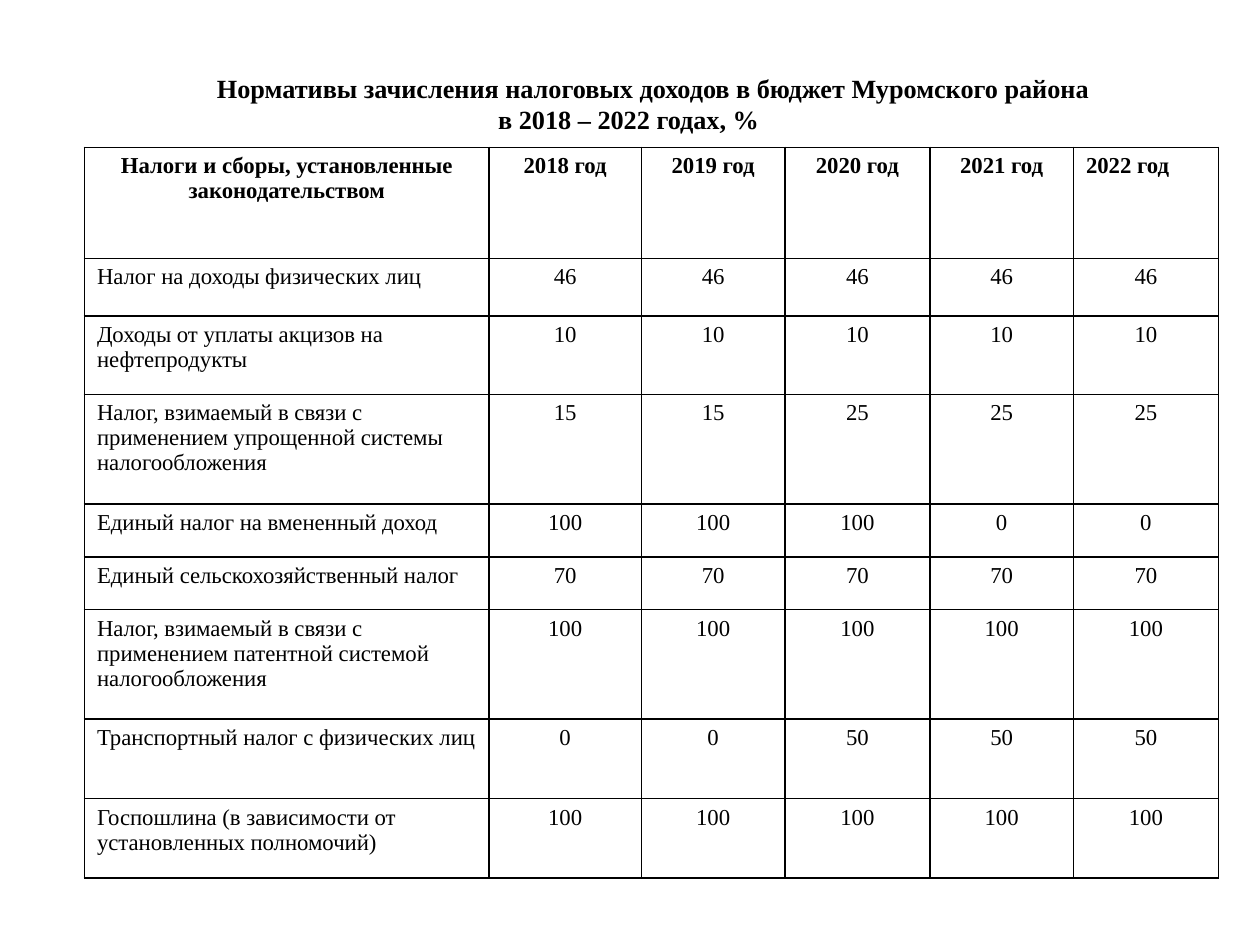
from lxml.etree import SubElement
from pptx import Presentation
from pptx.dml.color import RGBColor
from pptx.enum.text import MSO_ANCHOR, PP_ALIGN
from pptx.oxml.ns import qn
from pptx.util import Inches, Pt

COLORS = {"ink": "000000", "paper": "FFFFFF"}
FONT = "Times New Roman"

TITLE = "Нормативы зачисления налоговых доходов в бюджет Муромского района\vв 2018 – 2022 годах, %"
HEADER = ["Налоги и сборы, установленные законодательством"] + [f"{y} год" for y in range(2018, 2023)]
TAXES = [
    ("Налог на доходы физических лиц", 46, 46, 46, 46, 46),
    ("Доходы от уплаты акцизов на нефтепродукты", 10, 10, 10, 10, 10),
    ("Налог, взимаемый в связи с применением упрощенной системы налогообложения", 15, 15, 25, 25, 25),
    ("Единый налог на вмененный доход", 100, 100, 100, 0, 0),
    ("Единый сельскохозяйственный налог", 70, 70, 70, 70, 70),
    ("Налог, взимаемый в связи с применением патентной системой налогообложения", 100, 100, 100, 100, 100),
    ("Транспортный налог с физических лиц", 0, 0, 50, 50, 50),
    ("Госпошлина (в зависимости от установленных полномочий)", 100, 100, 100, 100, 100),
]
COL_WIDTHS = [3.21, 1.21, 1.14, 1.15, 1.14, 1.15]
ROW_HEIGHTS = [0.88, 0.46, 0.62, 0.87, 0.42, 0.42, 0.87, 0.63, 0.63]


def write(tf, text, size=13, bold=False, align=PP_ALIGN.CENTER):
    tf.word_wrap = True
    p = tf.paragraphs[0]
    p.text = text
    p.alignment = align
    for font in [p.font] + [r.font for r in p.runs]:
        font.name, font.size, font.bold = FONT, Pt(size), bold
        font.color.rgb = RGBColor.from_string(COLORS["ink"])
    return p


def set_borders(cell, width=1):
    tcPr = cell._tc.get_or_add_tcPr()
    for side in ("a:lnL", "a:lnR", "a:lnT", "a:lnB"):
        ln = SubElement(tcPr, qn(side), w=str(Pt(width)))
        fill = SubElement(ln, qn("a:solidFill"))
        SubElement(fill, qn("a:srgbClr"), val=COLORS["ink"])


def add_title(s, left, top, width, height):
    sp = s.shapes.add_textbox(left, top, width, height)
    sp.text_frame.vertical_anchor = MSO_ANCHOR.MIDDLE
    p = write(sp.text_frame, TITLE, size=15, bold=True)
    p._p.get_or_add_pPr().set("indent", str(Inches(0.39)))


def add_tax_table(s, left, top, width, height):
    rows = [HEADER] + TAXES
    table = s.shapes.add_table(len(rows), len(HEADER), left, top, width, height).table
    table.horz_banding = False
    for col, w in zip(table.columns, COL_WIDTHS):
        col.width = Inches(w)
    for row, h in zip(table.rows, ROW_HEIGHTS):
        row.height = Inches(h)
    for i, values in enumerate(rows):
        for j, value in enumerate(values):
            cell = table.cell(i, j)
            left_aligned = j == len(HEADER) - 1 if i == 0 else j == 0
            write(cell.text_frame, str(value), bold=i == 0,
                  align=PP_ALIGN.LEFT if left_aligned else PP_ALIGN.CENTER)
            set_borders(cell)
            cell.fill.solid()
            cell.fill.fore_color.rgb = RGBColor.from_string(COLORS["paper"])


def main():
    prs = Presentation()
    prs.slide_width, prs.slide_height = Inches(10), Inches(7.5)
    s = prs.slides.add_slide(prs.slide_layouts[6])
    add_title(s, Inches(0.5), Inches(0.5), Inches(8.98), Inches(0.64))
    add_tax_table(s, Inches(0.67), Inches(1.17), Inches(9), Inches(5.8))
    prs.save("out.pptx")


if __name__ == "__main__":
    main()
